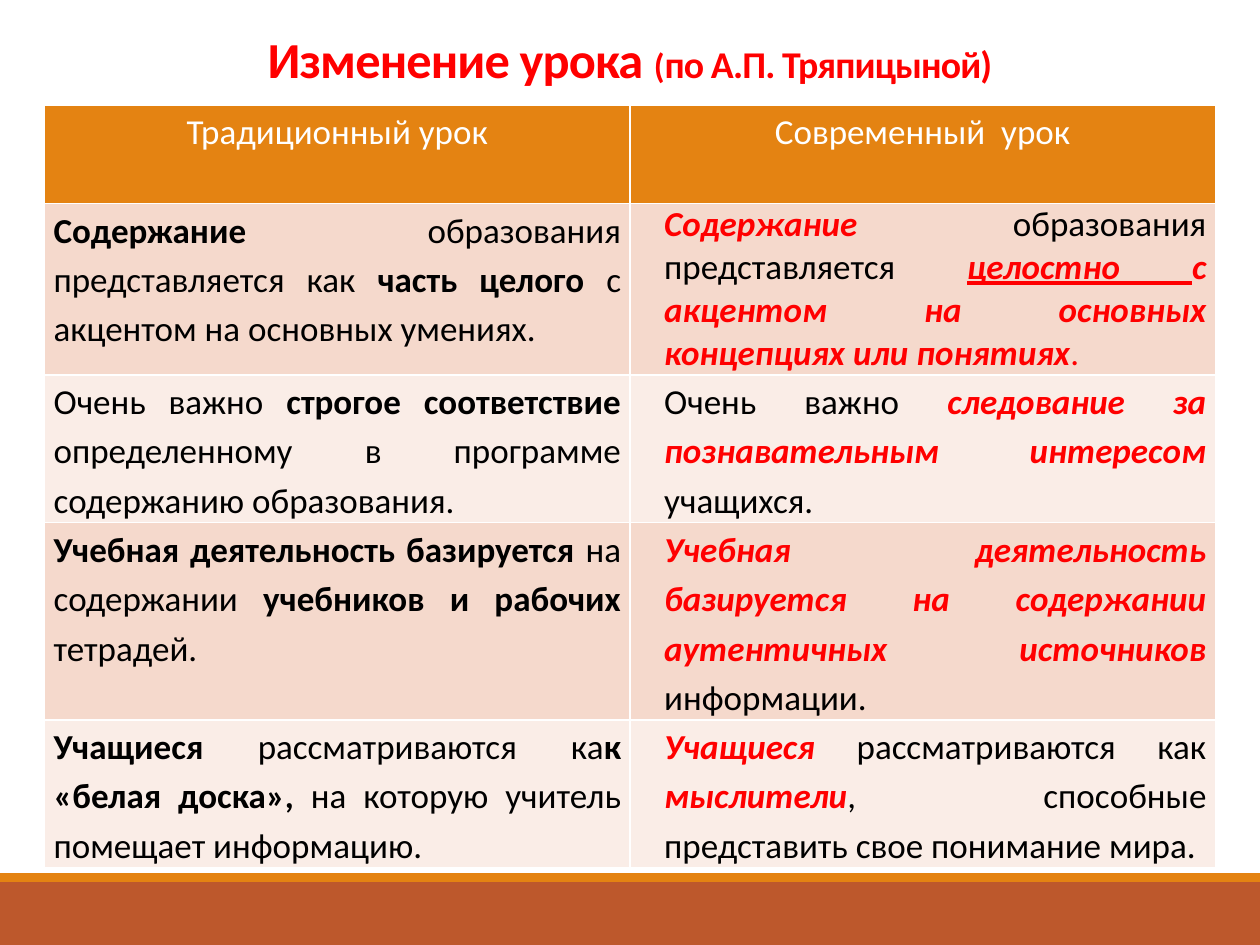
from pptx import Presentation
from pptx.dml.color import RGBColor
from pptx.enum.shapes import MSO_SHAPE as SHAPE
from pptx.enum.text import MSO_ANCHOR as ANCHOR, MSO_AUTO_SIZE as AUTO_SIZE, PP_ALIGN as ALIGN
from pptx.util import Cm, Pt

COLORS = {
    "rust": "BD582C", "orange": "E48312", "red": "FF0000", "black": "000000",
    "white": "FFFFFF", "dark_band": "F5D9CC", "light_band": "FAEDE7",
}
HEADERS = ["Традиционный урок", "Современный  урок"]
ROWS = [
    (3.44,
     [("Содержание", "bold"), (" образования представляется как ", "plain"),
      ("часть целого ", "bold"), ("с акцентом на основных умениях. ", "plain")],
     [("Содержание", "accent"), (" образования представляется ", "plain"),
      ("целостно ", "underlined"),
      ("с акцентом на основных концепциях или понятиях", "accent"), (".", "red")]),
    (2.97,
     [("Очень важно ", "plain"), ("строгое соответствие ", "bold"),
      ("определенному в программе содержанию образования.", "plain")],
     [("Очень важно ", "plain"), ("следование за познавательным интересом ", "accent"),
      ("учащихся.", "plain")]),
    (3.96,
     [("Учебная деятельность базируется ", "bold"), ("на содержании ", "plain"),
      ("учебников и рабочих ", "bold"), ("тетрадей.", "plain")],
     [("Учебная деятельность базируется на содержании аутентичных источников ", "accent"),
      ("информации.", "plain")]),
    (2.97,
     [("Учащиеся ", "bold"), ("рассматриваются ка", "plain"),
      ("к «белая доска», ", "bold"), ("на которую учитель помещает информацию.", "plain")],
     [("Учащиеся ", "accent"), ("рассматриваются как ", "plain"), ("мыслители", "accent"),
      (", способные представить свое понимание мира.", "plain")]),
]


def add_run(paragraph, text, size, color, bold=False, italic=False, underline=False):
    run = paragraph.add_run()
    run.text = text
    font = run.font
    font.name, font.size = "Calibri", Pt(size)
    font.bold, font.italic, font.underline = bold, italic, underline
    font.color.rgb = RGBColor.from_string(COLORS[color])
    return run


def prepare_cell(cell, fill, align, line_spacing):
    cell.fill.solid()
    cell.fill.fore_color.rgb = RGBColor.from_string(COLORS[fill])
    cell.margin_left = cell.margin_right = Cm(0.18)
    cell.margin_top = cell.margin_bottom = 0
    paragraph = cell.text_frame.paragraphs[0]
    paragraph.alignment = align
    paragraph.line_spacing = line_spacing
    return paragraph


presentation = Presentation()
presentation.slide_width, presentation.slide_height = Cm(25.4), Cm(19.05)
slide = presentation.slides.add_slide(presentation.slide_layouts[5])

for top, height, color in [(17.78, 1.27, "rust"), (17.6, 0.18, "orange")]:
    bar = slide.shapes.add_shape(SHAPE.RECTANGLE, 0, Cm(top), Cm(25.4), Cm(height))
    bar.shadow.inherit = False
    bar.fill.solid()
    bar.fill.fore_color.rgb = RGBColor.from_string(COLORS[color])
    bar.line.fill.background()

title = slide.shapes.title
title.left, title.top, title.width, title.height = Cm(1.27), Cm(0.76), Cm(22.86), Cm(2.21)
title_frame = title.text_frame
title_frame.auto_size = AUTO_SIZE.NONE
title_frame.vertical_anchor = ANCHOR.TOP
title_frame.margin_top = 0
title_paragraph = title_frame.paragraphs[0]
title_paragraph.alignment = ALIGN.CENTER
title_paragraph.line_spacing = 0.85
for text, size in [("Изменение урока ", 28.8), ("(", 19.8), ("по А.П. Тряпицыной)", 21.6)]:
    run = add_run(title_paragraph, text, size, "red", bold=True)
    run.font._element.set("spc", "-50")

table = slide.shapes.add_table(len(ROWS) + 1, 2, Cm(0.9), Cm(2.12), Cm(23.6), Cm(15.32)).table
table.rows[0].height = Cm(1.98)
for column, header in enumerate(HEADERS):
    paragraph = prepare_cell(table.cell(0, column), "orange", ALIGN.CENTER, 1.15)
    add_run(paragraph, header, 20, "white")

for row, (height, *texts) in enumerate(ROWS, start=1):
    table.rows[row].height = Cm(height)
    band = "dark_band" if row % 2 else "light_band"
    for column, runs in enumerate(texts):
        line_spacing = 1.0 if (row, column) == (1, 1) else 1.15
        paragraph = prepare_cell(table.cell(row, column), band, ALIGN.JUSTIFY, line_spacing)
        if column == 1:
            properties = paragraph._p.get_or_add_pPr()
            properties.set("marL", str(Cm(0.51)))
            properties.set("indent", "0")
        for text, style in runs:
            emphasized = style in ("accent", "underlined")
            add_run(paragraph, text, 20,
                    color="red" if emphasized or style == "red" else "black",
                    bold=emphasized or style == "bold",
                    italic=emphasized,
                    underline=style == "underlined")

presentation.save("out.pptx")
